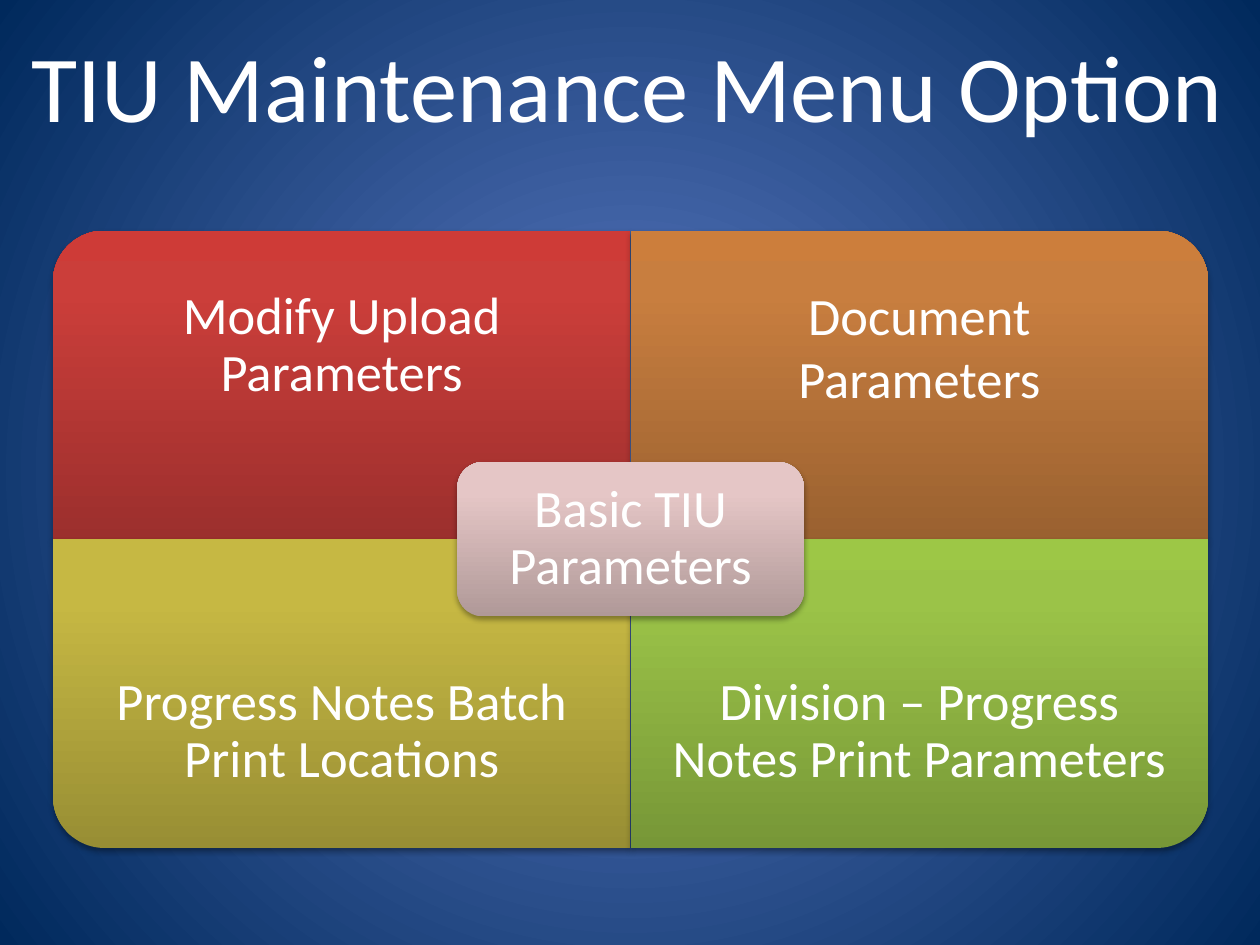
from lxml.etree import SubElement
from pptx import Presentation
from pptx.dml.color import RGBColor
from pptx.enum.shapes import MSO_SHAPE
from pptx.enum.text import MSO_ANCHOR, MSO_AUTO_SIZE, PP_ALIGN
from pptx.oxml import parse_xml
from pptx.oxml.ns import nsdecls, qn
from pptx.util import Inches, Pt

WHITE = RGBColor(0xFF, 0xFF, 0xFF)
BLACK = RGBColor(0x00, 0x00, 0x00)
BACKDROP = [(0, RGBColor(0x5E, 0x7C, 0xC5)), (100, RGBColor(0x00, 0x29, 0x5C))]


def shades(dark, main, light):
    return list(zip((0, 80, 100), map(RGBColor.from_string, (dark, main, light))))


RED = shades("9C2F2D", "CB3E3A", "CE3B37")
ORANGE = shades("9A6130", "C87E3F", "CC7E3C")
YELLOW = shades("988E34", "C6B843", "C9BB41")
GREEN = shades("779737", "9BC348", "9DC746")
PINK = shades("B09998", "E5C6C6", "E6C7C6")

UPWARD = '<a:lin ang="16200000" scaled="0"/>'
RADIAL = '<a:path path="circle"><a:fillToRect l="50000" t="50000" r="50000" b="50000"/></a:path>'

# Column, row, rotation of the rounded corner, shades, lines, line spacing
TILES = [
    (0, 0, 270, RED, ["Modify Upload Parameters"], 0.9),
    (1, 0, 0, ORANGE, ["Document", "Parameters"], 1),
    (0, 1, 180, YELLOW, ["Progress Notes Batch Print Locations"], 0.9),
    (1, 1, 90, GREEN, ["Division – Progress Notes Print Parameters"], 0.9),
]


def set_gradient(owner, parent, stops, direction):
    """Swap a solid fill for a gradient that does not turn with the shape."""
    owner.fill.solid()
    stop_xml = "".join(
        f'<a:gs pos="{pos * 1000}"><a:srgbClr val="{color}"/></a:gs>' for pos, color in stops)
    gradient = parse_xml(f'<a:gradFill {nsdecls("a")} rotWithShape="0">'
                         f'<a:gsLst>{stop_xml}</a:gsLst>{direction}</a:gradFill>')
    solid = parent.find(qn("a:solidFill"))
    parent.replace(solid, gradient)


def add_shadow(shape):
    shape.shadow.inherit = False
    effects = shape._element.spPr.find(qn("a:effectLst"))
    shadow = SubElement(effects, qn("a:outerShdw"), blurRad=str(Pt(3.1)),
                        dist=str(Pt(1.8)), dir="5400000", rotWithShape="0")
    color = SubElement(shadow, qn("a:srgbClr"), val=str(BLACK))
    SubElement(color, qn("a:alpha"), val="35000")


def add_block(page, kind, box, stops, rotation=0):
    """Shaded block covering box; a quarter turn swaps its own width and height."""
    left, top, width, height = box
    if rotation % 180:
        left, top = left + (width - height) / 2, top + (height - width) / 2
        width, height = height, width
    block = page.shapes.add_shape(kind, *map(Inches, (left, top, width, height)))
    block.rotation = rotation
    set_gradient(block, block._element.spPr, stops, UPWARD)
    block.line.fill.background()
    add_shadow(block)


def add_label(page, box, lines, size=30, margin=0.23, spacing=0.9):
    label = page.shapes.add_textbox(*map(Inches, box))
    frame = label.text_frame
    frame.word_wrap = True
    frame.vertical_anchor = MSO_ANCHOR.MIDDLE
    frame.margin_left = frame.margin_right = Inches(margin)
    frame.margin_top = frame.margin_bottom = Inches(margin)
    frame.text = "\n".join(lines)
    for para in frame.paragraphs:
        para.alignment = PP_ALIGN.CENTER
        para.line_spacing = spacing
        for span in para.runs:
            span.font.name = "Calibri"
            span.font.size = Pt(size)
            span.font.color.rgb = WHITE
    return frame


def add_title(page, box):
    frame = add_label(page, box, ["TIU Maintenance Menu Option"], 54, 0.05, 1)
    frame.vertical_anchor = MSO_ANCHOR.TOP
    frame.margin_left = frame.margin_right = Inches(0.1)
    frame.word_wrap = False
    frame.auto_size = MSO_AUTO_SIZE.SHAPE_TO_FIT_TEXT


def add_matrix(page, box):
    left, top, width, height = box
    tile_width, tile_height = width / 2, height / 2

    # Four tiles, each label in the outer three quarters of its tile
    label_height = tile_height * 0.75
    for column, row, rotation, stops, lines, spacing in TILES:
        x, y = left + column * tile_width, top + row * tile_height
        add_block(page, MSO_SHAPE.ROUND_1_RECTANGLE,
                  (x, y, tile_width, tile_height), stops, rotation)
        label_top = y + row * (tile_height - label_height)
        add_label(page, (x, label_top, tile_width, label_height), lines, spacing=spacing)

    # Centre block over the meeting point of the tiles
    core_width, core_height, inset = tile_width * 0.6, tile_height / 2, 0.06
    x, y = left + (width - core_width) / 2, top + (height - core_height) / 2
    add_block(page, MSO_SHAPE.ROUNDED_RECTANGLE, (x, y, core_width, core_height), PINK)
    add_label(page, (x + inset, y + inset, core_width - 2 * inset, core_height - 2 * inset),
              ["Basic TIU Parameters"], margin=0.12)


def main():
    deck = Presentation()
    deck.slide_width, deck.slide_height = Inches(10), Inches(7.5)
    page = deck.slides.add_slide(deck.slide_layouts[6])

    # Radial background
    background = page.background
    background.fill.solid()
    set_gradient(background, page._element.cSld.find(qn("p:bg")).find(qn("p:bgPr")),
                 BACKDROP, RADIAL)

    add_matrix(page, (0.42, 1.83, 9.17, 4.9))
    add_title(page, (0, 0.17, 9.96, 1.01))
    deck.save("out.pptx")


if __name__ == "__main__":
    main()
